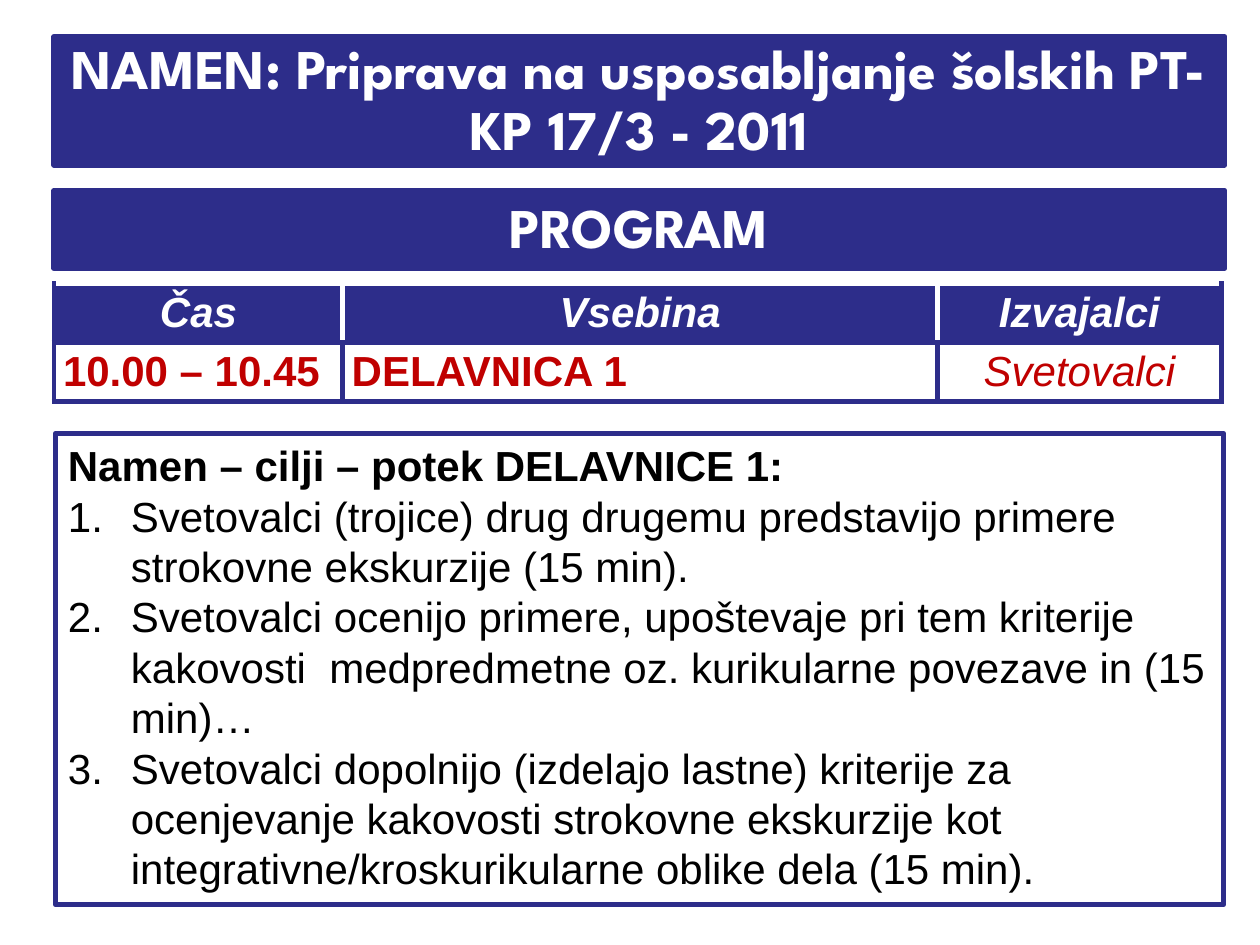
from dataclasses import dataclass

from pptx import Presentation
from pptx.dml.color import RGBColor
from pptx.enum.shapes import MSO_SHAPE as Shape
from pptx.enum.text import MSO_ANCHOR as Anchor, MSO_AUTO_SIZE as AutoSize, PP_ALIGN as Align
from pptx.oxml import parse_xml
from pptx.oxml.ns import nsdecls
from pptx.slide import Slide
from pptx.util import Cm, Pt

COLORS = {"navy": "2D2D8A", "white": "FFFFFF", "red": "C00000", "black": "000000"}


@dataclass
class ProgramSlide:
    """Style and element builders for the workshop programme slide."""

    slide: Slide
    heading_font: str = "League Spartan"
    body_font: str = "Arial"
    heading_size: int = 32
    body_size: int = 24
    border: int = 3

    def color(self, name):
        return RGBColor.from_string(COLORS[name])

    def add_text(self, paragraph, text, color, font=None, size=None, bold=False, italic=False):
        run = paragraph.add_run()
        run.text = text
        run.font.name = font or self.body_font
        run.font.size = Pt(size or self.body_size)
        run.font.bold = bold
        run.font.italic = italic
        run.font.color.rgb = self.color(color)

    def panel(self, left, top, width, height, fill):
        panel = self.slide.shapes.add_shape(Shape.RECTANGLE, Cm(left), Cm(top), Cm(width), Cm(height))
        panel.shadow.inherit = False
        panel.fill.solid()
        panel.fill.fore_color.rgb = self.color(fill)
        panel.line.color.rgb = self.color("navy")
        panel.line.width = Pt(self.border)
        panel.text_frame.word_wrap = True
        return panel.text_frame

    def banner(self, text, left, top, width, height):
        frame = self.panel(left, top, width, height, "navy")
        frame.vertical_anchor = Anchor.MIDDLE
        heading = frame.paragraphs[0]
        heading.alignment = Align.CENTER
        heading.line_spacing = Pt(35)
        self.add_text(heading, text, "white", self.heading_font, self.heading_size, bold=True)

    def numbered_box(self, heading, steps, left, top, width, height):
        frame = self.panel(left, top, width, height, "white")
        frame.vertical_anchor = Anchor.TOP
        frame.auto_size = AutoSize.SHAPE_TO_FIT_TEXT
        intro = frame.paragraphs[0]
        intro.alignment = Align.LEFT
        self.add_text(intro, heading, "black", bold=True)
        for step in steps:
            item = frame.add_paragraph()
            item.alignment = Align.LEFT
            properties = item._p.get_or_add_pPr()
            properties.set("marL", str(Cm(1.27)))
            properties.set("indent", str(-Cm(1.27)))
            properties.append(parse_xml(f'<a:buFont {nsdecls("a")} typeface="+mj-lt"/>'))
            properties.append(parse_xml(f'<a:buAutoNum {nsdecls("a")} type="arabicPeriod"/>'))
            self.add_text(item, step, "black")

    def cell_borders(self, cell, **sides):
        properties = cell._tc.get_or_add_tcPr()
        for position, side in enumerate("LRTB"):
            properties.insert(position, parse_xml(
                f'<a:ln{side} {nsdecls("a")} w="{Pt(self.border)}"><a:solidFill>'
                f'<a:srgbClr val="{COLORS[sides.get(side, "navy")]}"/></a:solidFill></a:ln{side}>'))

    def schedule(self, header, session, left, top, widths, row_height):
        table = self.slide.shapes.add_table(
            2, len(widths), Cm(left), Cm(top), Cm(sum(widths)), Cm(2 * row_height)).table
        last = len(widths) - 1
        for column, width in enumerate(widths):
            table.columns[column].width = Cm(width)
            alignment = Align.CENTER if column == last else Align.LEFT
            self.cell(table.cell(0, column), header[column], "navy", "white", Align.CENTER, True, True)
            self.cell(table.cell(1, column), session[column], "white", "red", alignment,
                      column != last, column == last)
            self.cell_borders(table.cell(0, column), T="white",
                              L="white" if column else "navy",
                              R="navy" if column == last else "white")
            self.cell_borders(table.cell(1, column))
        for row in table.rows:
            row.height = Cm(row_height)

    def cell(self, cell, text, fill, color, alignment, bold, italic):
        cell.fill.solid()
        cell.fill.fore_color.rgb = self.color(fill)
        cell.vertical_anchor = Anchor.MIDDLE
        cell.margin_left = cell.margin_right = Cm(0.18)
        cell.margin_top = cell.margin_bottom = Cm(0)
        paragraph = cell.text_frame.paragraphs[0]
        paragraph.alignment = alignment
        self.add_text(paragraph, text, color, bold=bold, italic=italic)


def main():
    deck = Presentation()
    deck.slide_width, deck.slide_height = Cm(25.4), Cm(19.05)
    program = ProgramSlide(deck.slides.add_slide(deck.slide_layouts[6]))
    left, width = 1.09, 23.6

    program.banner("NAMEN: Priprava na usposabljanje šolskih PT-KP 17/3 - 2011", left, 0.74, width, 2.59)
    program.schedule(["Čas", "Vsebina", "Izvajalci"],
                     ["10.00 – 10.45", "DELAVNICA 1", "Svetovalci"],
                     left, 5.72, [5.82, 11.99, 5.72], 1.19)
    program.banner("PROGRAM", left, 3.84, width, 1.57)
    program.numbered_box(
        "Namen – cilji – potek DELAVNICE 1:",
        ["Svetovalci (trojice) drug drugemu predstavijo primere strokovne ekskurzije (15 min).",
         "Svetovalci ocenijo primere, upoštevaje pri tem kriterije kakovosti  medpredmetne oz. "
         "kurikularne povezave in (15 min)…",
         "Svetovalci dopolnijo (izdelajo lastne) kriterije za ocenjevanje kakovosti strokovne "
         "ekskurzije kot integrativne/kroskurikularne oblike dela (15 min)."],
        1.12, 8.74, 23.55, 9.5)
    deck.save("out.pptx")


if __name__ == "__main__":
    main()
